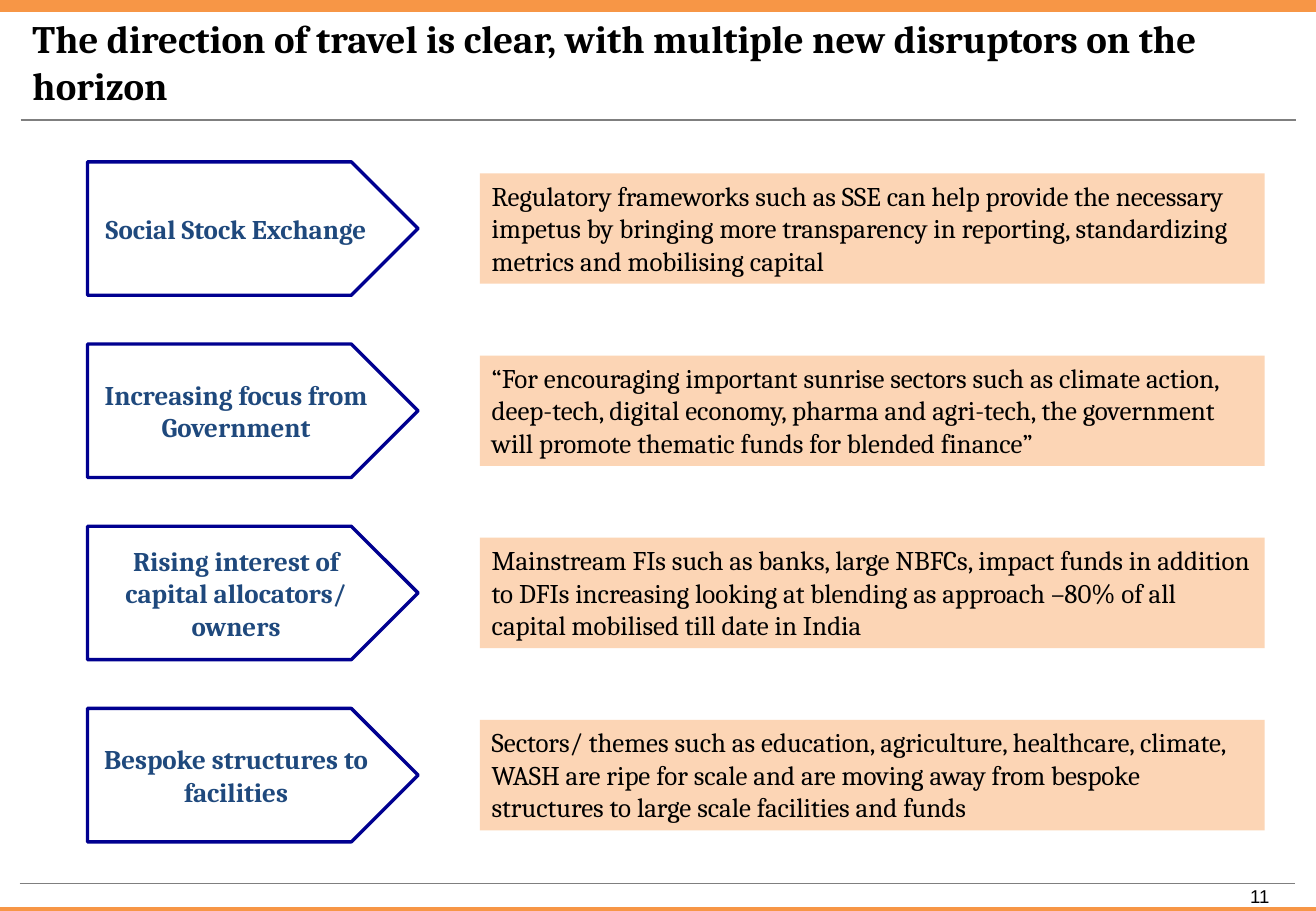
"""Build the slide on new disruptors: four arrows, each with its explanation."""
from lxml import etree
from pptx import Presentation
from pptx import util as u
from pptx.dml.color import RGBColor
from pptx.enum import shapes, text
from pptx.oxml.ns import qn

TITLE = "The direction of travel is clear, with multiple new disruptors on the horizon"
PAGE_NUMBER = "11"
DISRUPTORS = [
    ("Social Stock Exchange",
     "Regulatory frameworks such as SSE can help provide the necessary impetus by bringing "
     "more transparency in reporting, standardizing metrics and mobilising capital"),
    ("Increasing focus from Government",
     "“For encouraging important sunrise sectors such as climate action, deep-tech, digital "
     "economy, pharma and agri-tech, the government will promote thematic funds for "
     "blended finance”"),
    ("Rising interest of capital allocators/ owners",
     "Mainstream FIs such as banks, large NBFCs, impact funds in addition to DFIs increasing "
     "looking at blending as approach –80% of all capital mobilised till date in India"),
    ("Bespoke structures to facilities",
     "Sectors/ themes such as education, agriculture, healthcare, climate, WASH are ripe for "
     "scale and are moving away from bespoke structures to large scale facilities and funds"),
]

ORANGE = RGBColor(0xF7, 0x96, 0x46)
PEACH = RGBColor(0xFC, 0xD5, 0xB5)
NAVY = RGBColor(0x00, 0x00, 0x90)
BLUE = RGBColor(0x1F, 0x49, 0x7D)
GREY = RGBColor(0x7F, 0x7F, 0x7F)
BLACK = RGBColor(0, 0, 0)
WHITE = RGBColor(0xFF, 0xFF, 0xFF)

SLIDE_WIDTH, SLIDE_HEIGHT = 27.51, 19.05
BARS = [(0, 0.25), (18.97, 0.13)]
RULES = [(0.43, 2.51), (0.41, 18.47)]
RULE_LENGTH = 26.67
FIRST_CENTRE, ROW_PITCH = 4.78, 3.81
ARROW_LEFT, ARROW_WIDTH, ARROW_HEIGHT = 1.83, 6.91, 2.79
NOTE_LEFT, NOTE_WIDTH, NOTE_HEIGHT = 10.03, 16.41, 2.31


def add_block(page, kind, left, top, width, height, fill, line=None):
    block = page.shapes.add_shape(kind, u.Cm(left), u.Cm(top), u.Cm(width), u.Cm(height))
    block.shadow.inherit = False
    block.fill.solid()
    block.fill.fore_color.rgb = fill
    if line is None:
        block.line.fill.background()
    else:
        block.line.color.rgb = line
        block.line.width = u.Pt(2)
    return block


def add_rule(page, left, top):
    rule = page.shapes.add_connector(shapes.MSO_CONNECTOR.STRAIGHT, u.Cm(left), u.Cm(top),
                                     u.Cm(left + RULE_LENGTH), u.Cm(top))
    rule.line.color.rgb = GREY
    rule.line.width = u.Pt(0.75)
    etree.SubElement(rule._element.spPr, qn("a:effectLst"))


def write(box, words, size, color, align, anchor, bold=False, font="Cambria"):
    frame = box.text_frame
    frame.word_wrap = True
    frame.vertical_anchor = anchor
    para = frame.paragraphs[0]
    para.text = words
    para.alignment = align
    para.font.name = font
    para.font.size = u.Pt(size)
    para.font.bold = bold
    para.font.color.rgb = color


def main():
    deck = Presentation()
    deck.slide_width, deck.slide_height = u.Cm(SLIDE_WIDTH), u.Cm(SLIDE_HEIGHT)
    page = deck.slides.add_slide(deck.slide_layouts[6])
    rectangle, pentagon = shapes.MSO_SHAPE.RECTANGLE, shapes.MSO_SHAPE.PENTAGON
    left, centre = text.PP_ALIGN.LEFT, text.PP_ALIGN.CENTER
    top, middle, bottom = text.MSO_ANCHOR.TOP, text.MSO_ANCHOR.MIDDLE, text.MSO_ANCHOR.BOTTOM

    for bar_top, bar_height in BARS:
        add_block(page, rectangle, 0, bar_top, SLIDE_WIDTH, bar_height, ORANGE)
    for rule_left, rule_top in RULES:
        add_rule(page, rule_left, rule_top)

    title = page.shapes.add_textbox(u.Cm(0.43), u.Cm(0.56), u.Cm(26.64), u.Cm(1.95))
    title.text_frame.margin_top = title.text_frame.margin_bottom = u.Cm(0.25)
    write(title, TITLE, 23, BLACK, left, bottom, bold=True)
    number = page.shapes.add_textbox(u.Cm(25.6), u.Cm(18.39), u.Cm(1.47), u.Cm(0.76))
    write(number, PAGE_NUMBER, 11, BLACK, centre, top, font="Arial")

    for row, (label, explanation) in enumerate(DISRUPTORS):
        row_centre = FIRST_CENTRE + row * ROW_PITCH
        arrow = add_block(page, pentagon, ARROW_LEFT, row_centre - ARROW_HEIGHT / 2,
                          ARROW_WIDTH, ARROW_HEIGHT, WHITE, NAVY)
        write(arrow, label, 16, BLUE, centre, middle, bold=True)
        note = add_block(page, rectangle, NOTE_LEFT, row_centre - NOTE_HEIGHT / 2,
                         NOTE_WIDTH, NOTE_HEIGHT, PEACH)
        write(note, explanation, 16, BLACK, left, top)
        note.text_frame.auto_size = text.MSO_AUTO_SIZE.SHAPE_TO_FIT_TEXT

    deck.save("out.pptx")


if __name__ == "__main__":
    main()
